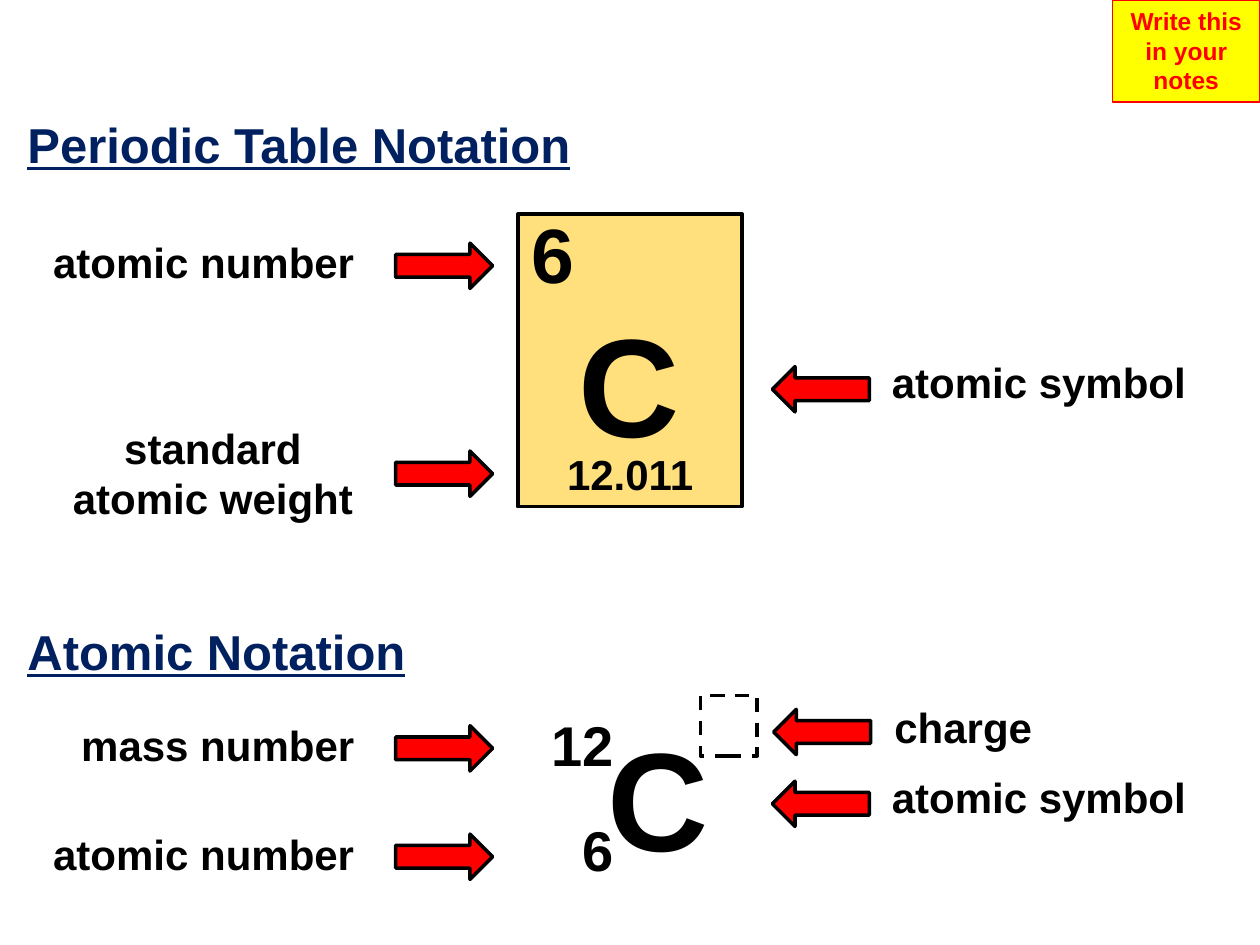
from dataclasses import dataclass

from pptx import Presentation
from pptx.dml.color import RGBColor
from pptx.enum.dml import MSO_LINE
from pptx.enum.shapes import MSO_SHAPE
from pptx.enum.text import MSO_ANCHOR, MSO_AUTO_SIZE, PP_ALIGN
from pptx.util import Inches, Pt

RECTANGLE = MSO_SHAPE.RECTANGLE
RIGHT_ARROW, LEFT_ARROW = MSO_SHAPE.RIGHT_ARROW, MSO_SHAPE.LEFT_ARROW
LEFT, CENTER, RIGHT = PP_ALIGN.LEFT, PP_ALIGN.CENTER, PP_ALIGN.RIGHT


@dataclass(frozen=True)
class Theme:
    font: str = "Arial"
    black: str = "000000"
    red: str = "FF0000"
    yellow: str = "FFFF00"
    navy: str = "002060"
    tile: str = "FFE07D"
    note_size: int = 14
    label_size: int = 24
    heading_size: int = 28
    index_size: int = 32
    number_size: int = 44
    symbol_size: int = 80


THEME = Theme()
ARROW_WIDTH, ARROW_HEIGHT = 0.77, 0.36
LEFT_ARROW_X = 3.14


def write_text(text_frame, text, size, color, align, underline=None):
    text_frame.text = text
    for paragraph in text_frame.paragraphs:
        paragraph.alignment = align
        for run in paragraph.runs:
            font = run.font
            font.name = THEME.font
            font.size = Pt(size)
            font.bold = True
            font.underline = underline
            font.color.rgb = RGBColor.from_string(color)


def add_text(slide, box, text, size=THEME.label_size, align=LEFT,
             color=THEME.black, underline=None):
    shape = slide.shapes.add_textbox(*map(Inches, box))
    shape.text_frame.word_wrap = False
    shape.text_frame.auto_size = MSO_AUTO_SIZE.SHAPE_TO_FIT_TEXT
    write_text(shape.text_frame, text, size, color, align, underline)


def add_shape(slide, kind, box, fill=None, line=THEME.black, line_width=2):
    """Add a preset shape; without a fill colour it stays transparent."""
    shape = slide.shapes.add_shape(kind, *map(Inches, box))
    shape.shadow.inherit = False
    if fill:
        shape.fill.solid()
        shape.fill.fore_color.rgb = RGBColor.from_string(fill)
    else:
        shape.fill.background()
    shape.line.color.rgb = RGBColor.from_string(line)
    shape.line.width = Pt(line_width)
    return shape


def add_heading(slide, top, width, text):
    add_text(slide, (0.12, top, width, 0.57), text, THEME.heading_size,
             color=THEME.navy, underline=True)


def add_arrow(slide, kind, left, top):
    add_shape(slide, kind, (left, top, ARROW_WIDTH, ARROW_HEIGHT), THEME.red)


def add_left_label(slide, box, text, arrow_top, align=RIGHT):
    add_text(slide, box, text, align=align)
    add_arrow(slide, RIGHT_ARROW, LEFT_ARROW_X, arrow_top)


def add_right_label(slide, box, text, arrow_left, arrow_top):
    add_text(slide, box, text)
    add_arrow(slide, LEFT_ARROW, arrow_left, arrow_top)


def add_note(slide):
    note = add_shape(slide, RECTANGLE, (8.83, 0, 1.17, 0.81),
                     THEME.yellow, THEME.red, 0.75)
    note.text_frame.word_wrap = True
    note.text_frame.vertical_anchor = MSO_ANCHOR.TOP
    write_text(note.text_frame, "Write this in your notes",
               THEME.note_size, THEME.red, CENTER)


def add_periodic_table_notation(slide):
    add_heading(slide, 0.86, 4.56, "Periodic Table Notation")
    add_shape(slide, RECTANGLE, (4.11, 1.7, 1.78, 2.32), THEME.tile,
              line_width=2.25)
    add_text(slide, (4.39, 3.51, 1.21, 0.5), "12.011", align=RIGHT)
    add_text(slide, (4.11, 1.59, 0.55, 0.84), "6", THEME.number_size, RIGHT)
    add_text(slide, (4.49, 2.31, 1.01, 1.45), "C", THEME.symbol_size)

    add_left_label(slide, (0.3, 1.83, 2.61, 0.51), "atomic number", 1.93)
    add_left_label(slide, (0.47, 3.3, 2.44, 0.91),
                   "standard\natomic weight", 3.58, CENTER)
    add_right_label(slide, (6.98, 2.78, 2.56, 0.51), "atomic symbol",
                    6.13, 2.91)


def add_atomic_notation(slide):
    add_heading(slide, 4.88, 3.24, "Atomic Notation")
    add_text(slide, (4.27, 5.59, 0.7, 0.64), "12", THEME.index_size, RIGHT)
    add_text(slide, (4.52, 6.42, 0.45, 0.64), "6", THEME.index_size, RIGHT)
    add_text(slide, (4.72, 5.6, 1.01, 1.45), "C", THEME.symbol_size)

    add_left_label(slide, (0.52, 5.66, 2.39, 0.51), "mass number", 5.76)
    add_left_label(slide, (0.3, 6.53, 2.61, 0.51), "atomic number", 6.62)
    add_right_label(slide, (6.98, 6.07, 2.56, 0.51), "atomic symbol",
                    6.13, 6.2)
    add_right_label(slide, (7, 5.52, 1.31, 0.5), "charge", 6.14, 5.63)

    charge_box = add_shape(slide, RECTANGLE, (5.56, 5.52, 0.45, 0.48))
    charge_box.line.dash_style = MSO_LINE.DASH


def main():
    presentation = Presentation()
    presentation.slide_width = Inches(10)
    presentation.slide_height = Inches(7.5)
    slide = presentation.slides.add_slide(presentation.slide_layouts[6])
    add_note(slide)
    add_periodic_table_notation(slide)
    add_atomic_notation(slide)
    presentation.save("out.pptx")


if __name__ == "__main__":
    main()
